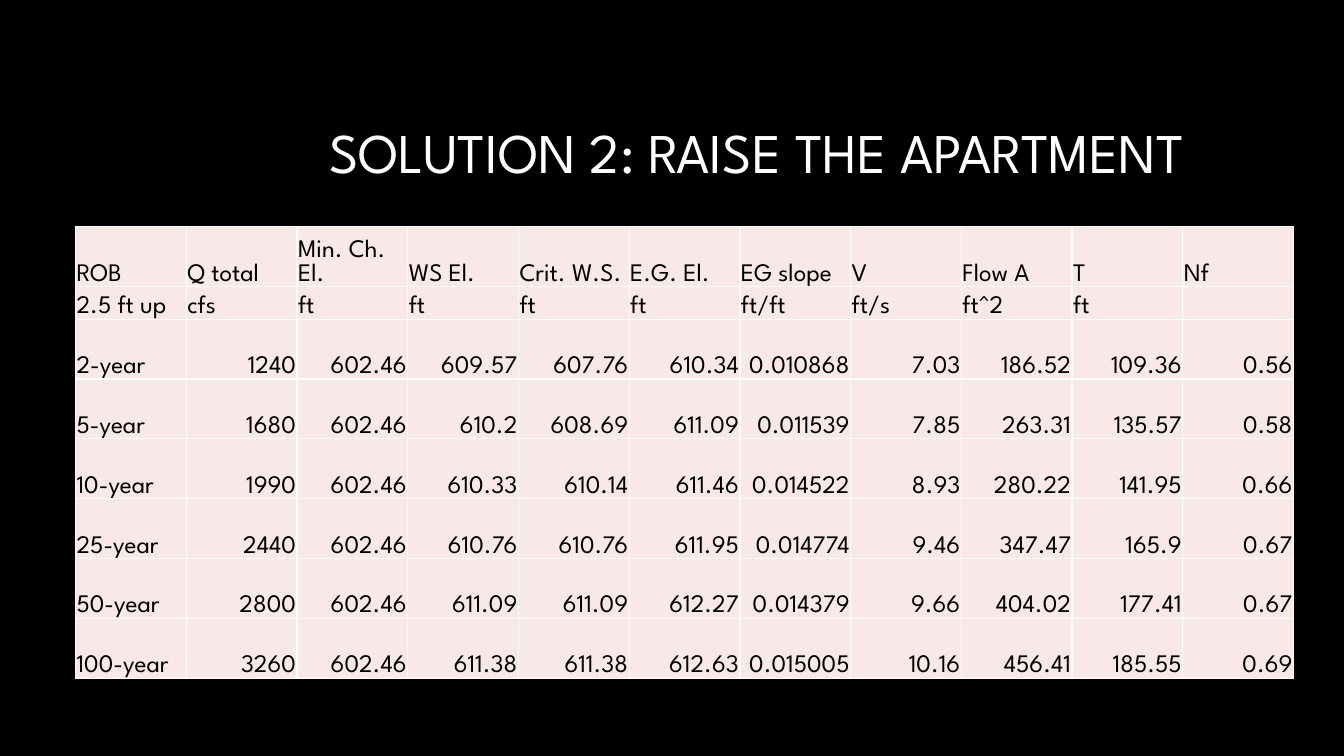
"""Build a slide with a table of flood results for a raised apartment."""
import dataclasses

import pptx
import pptx.dml.color
import pptx.enum.text
import pptx.oxml.ns
import pptx.util
from lxml import etree


@dataclasses.dataclass(frozen=True)
class Theme:
    font: str = "League Spartan"
    background: str = "000000"
    title_color: str = "FFFFFF"
    cell_fill: str = "F9E8E8"
    cell_text: str = "000000"
    border: str = "FFFFFF"
    title_size: int = 40
    cell_size: int = 18


ALIGN = pptx.enum.text.PP_ALIGN
ANCHOR = pptx.enum.text.MSO_ANCHOR
HEADER_ROWS = 2
ROW_HEIGHTS = [57, 31] + [57] * 6
RESULTS = [
    ["ROB", "Q total", "Min. Ch. El.", "WS El.", "Crit. W.S.", "E.G. El.",
     "EG slope", "V", "Flow A", "T", "Nf"],
    ["2.5 ft up", "cfs", "ft", "ft", "ft", "ft", "ft/ft", "ft/s", "ft^2", "ft", ""],
    ["2-year", "1240", "602.46", "609.57", "607.76", "610.34",
     "0.010868", "7.03", "186.52", "109.36", "0.56"],
    ["5-year", "1680", "602.46", "610.2", "608.69", "611.09",
     "0.011539", "7.85", "263.31", "135.57", "0.58"],
    ["10-year", "1990", "602.46", "610.33", "610.14", "611.46",
     "0.014522", "8.93", "280.22", "141.95", "0.66"],
    ["25-year", "2440", "602.46", "610.76", "610.76", "611.95",
     "0.014774", "9.46", "347.47", "165.9", "0.67"],
    ["50-year", "2800", "602.46", "611.09", "611.09", "612.27",
     "0.014379", "9.66", "404.02", "177.41", "0.67"],
    ["100-year", "3260", "602.46", "611.38", "611.38", "612.63",
     "0.015005", "10.16", "456.41", "185.55", "0.69"],
]


def px(n):
    return pptx.util.Emu(n * 9525)


def rgb(color):
    return pptx.dml.color.RGBColor.from_string(color)


def write(tf, text, *, font, size, color, align=ALIGN.LEFT, spacing=None):
    p = tf.paragraphs[0]
    p.alignment = align
    if spacing:
        p.line_spacing = spacing
    if text:
        r = p.add_run()
        r.text = text
        r.font.name = font
        r.font.size = pptx.util.Pt(size)
        r.font.color.rgb = rgb(color)


class SlideBuilder:
    def __init__(self, prs, theme):
        self.theme = theme
        self.s = prs.slides.add_slide(prs.slide_layouts[5])
        fill = self.s.background.fill
        fill.solid()
        fill.fore_color.rgb = rgb(theme.background)

    def title(self, text, x, y, w, h):
        sp = self.s.shapes.title
        sp.left, sp.top, sp.width, sp.height = px(x), px(y), px(w), px(h)
        tf = sp.text_frame
        tf.word_wrap = True
        tf.auto_size = pptx.enum.text.MSO_AUTO_SIZE.NONE
        tf.vertical_anchor = ANCHOR.MIDDLE
        write(tf, text, font=self.theme.font, size=self.theme.title_size,
              color=self.theme.title_color, spacing=0.9)

    def table(self, rows, heights, x, y, w):
        table = self.s.shapes.add_table(
            len(rows), len(rows[0]), px(x), px(y), px(w), px(sum(heights))).table
        table.first_row = table.horz_banding = False
        for i, (values, height) in enumerate(zip(rows, heights)):
            table.rows[i].height = px(height)
            for j, value in enumerate(values):
                numeric = i >= HEADER_ROWS and j > 0
                self.cell(table.cell(i, j), value, ALIGN.RIGHT if numeric else ALIGN.LEFT)

    def cell(self, cell, text, align):
        cell.margin_left = cell.margin_right = cell.margin_top = px(1)
        cell.margin_bottom = 0
        cell.vertical_anchor = ANCHOR.BOTTOM
        self.borders(cell)
        cell.fill.solid()
        cell.fill.fore_color.rgb = rgb(self.theme.cell_fill)
        write(cell.text_frame, text, font=self.theme.font, size=self.theme.cell_size,
              color=self.theme.cell_text, align=align)

    def borders(self, cell):
        qn = pptx.oxml.ns.qn
        tcPr = cell._tc.get_or_add_tcPr()
        for side in "LRTB":
            ln = etree.SubElement(tcPr, qn(f"a:ln{side}"), w=str(pptx.util.Pt(1)))
            fill = etree.SubElement(ln, qn("a:solidFill"))
            etree.SubElement(fill, qn("a:srgbClr"), val=self.theme.border)


def main():
    prs = pptx.Presentation()
    prs.slide_width, prs.slide_height = px(1280), px(720)
    slide = SlideBuilder(prs, Theme())
    slide.title("SOLUTION 2: RAISE THE APARTMENT", 304, 80, 904, 136)
    slide.table(RESULTS, ROW_HEIGHTS, 72, 216, 1160)
    prs.save("out.pptx")


if __name__ == "__main__":
    main()
